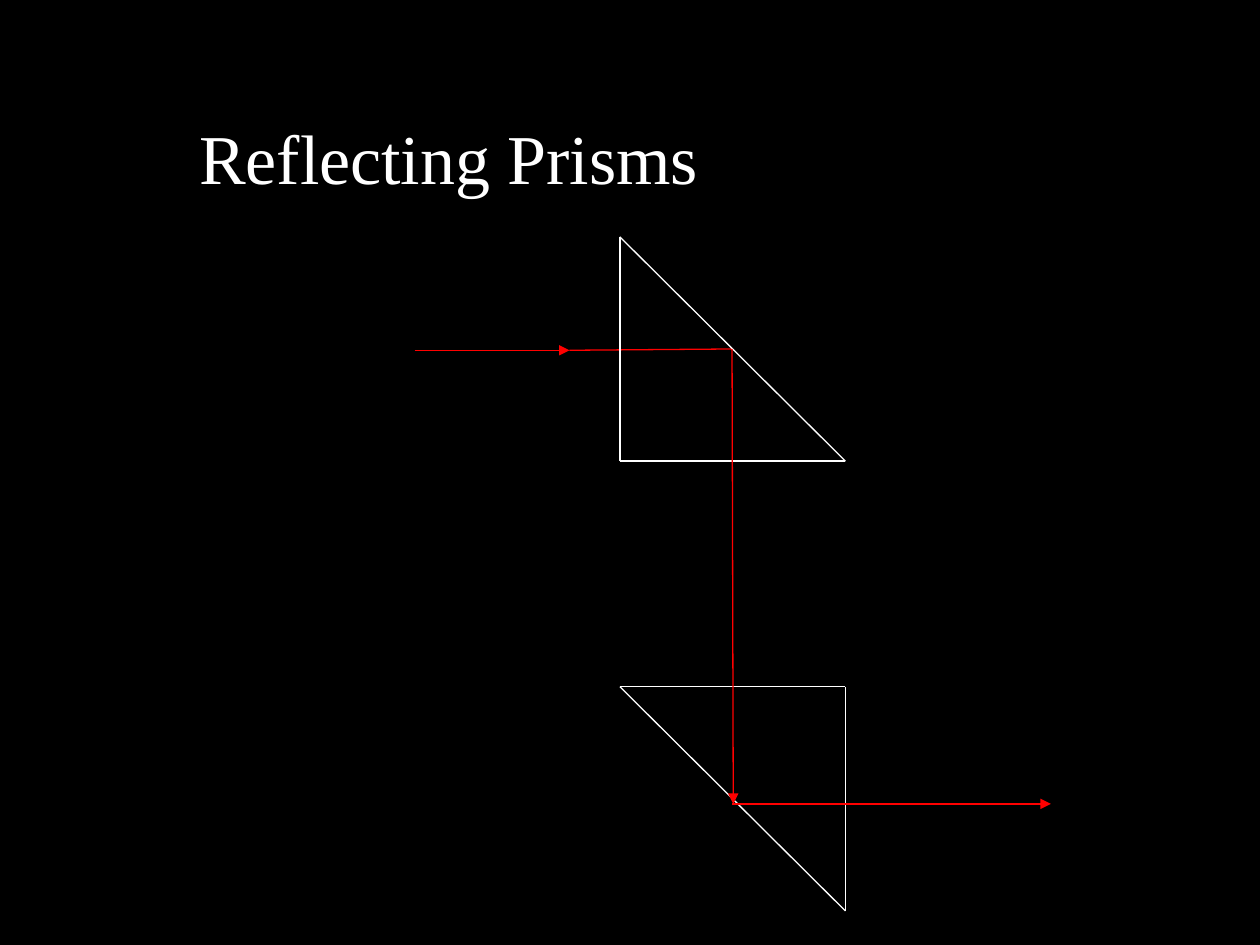
from typing import NamedTuple

from lxml import etree
from pptx import Presentation
from pptx.dml.color import RGBColor
from pptx.enum import shapes, text
from pptx.oxml.ns import qn
from pptx.util import Inches, Pt

BLACK, WHITE, RED = "000000", "FFFFFF", "FF0000"


class Line(NamedTuple):
    x1: float
    y1: float
    x2: float
    y2: float
    color: str = WHITE
    arrow: bool = False


def rgb(color: str) -> RGBColor:
    return RGBColor.from_string(color)


def set_text(sp, content: str, *, size: float, color: str,
             font: str = "Times New Roman", left: float = 0, indent: float = 0) -> None:
    tf = sp.text_frame
    tf.word_wrap = True
    tf.auto_size = text.MSO_AUTO_SIZE.NONE
    tf.vertical_anchor = text.MSO_ANCHOR.MIDDLE
    tf.margin_left = tf.margin_right = tf.margin_top = tf.margin_bottom = 0
    p = tf.paragraphs[0]
    p.alignment = text.PP_ALIGN.LEFT
    pPr = p._p.get_or_add_pPr()
    pPr.set("marL", str(Inches(left)))
    pPr.set("indent", str(Inches(indent)))
    r = p.add_run()
    r.text = content
    r.font.size = Pt(size)
    r.font.name = font
    r.font.color.rgb = rgb(color)


def draw_line(parent, line: Line) -> None:
    ends = [Inches(v) for v in line[:4]]
    c = parent.add_connector(shapes.MSO_CONNECTOR.STRAIGHT, *ends)
    c.line.color.rgb = rgb(line.color)
    c.line.width = Pt(0.75)
    if line.arrow:
        etree.SubElement(c.line._get_or_add_ln(), qn("a:tailEnd"), type="triangle")
    etree.SubElement(c._element.spPr, qn("a:effectLst"))


def prism(*corners: tuple[float, float]) -> list[Line]:
    """Return the sides that close a prism outline."""
    return [Line(*a, *b) for a, b in zip(corners, corners[1:] + corners[:1])]


prs = Presentation()
prs.slide_width, prs.slide_height = Inches(10), Inches(7.5)
s = prs.slides.add_slide(prs.slide_layouts[5])
s.background.fill.solid()
s.background.fill.fore_color.rgb = rgb(BLACK)

# Title
title = s.shapes.title
title.left, title.top = Inches(0.73), Inches(0.62)
title.width, title.height = Inches(8.54), Inches(1.25)
set_text(title, "Reflecting Prisms", size=40, color=WHITE, left=1.07, indent=-0.22)

# Prisms, with the ray entering the upper one
LEFT, RIGHT = 4.92, 6.71
optics = s.shapes.add_group_shape()
entering = [Line(4.52, 2.78, 5.81, 2.77, RED)]
upper = prism((LEFT, 3.66), (LEFT, 1.88), (RIGHT, 3.66))
incoming = [Line(3.29, 2.78, 4.52, 2.78, RED, arrow=True)]
lower = prism((LEFT, 5.45), (RIGHT, 5.45), (RIGHT, 7.23))
for line in entering + upper + incoming + lower:
    draw_line(optics.shapes, line)

# Reflected rays
for ray in (Line(5.81, 2.77, 5.82, 6.38, RED, arrow=True),
            Line(5.81, 6.38, 8.34, 6.38, RED, arrow=True)):
    draw_line(s.shapes, ray)

prs.save("out.pptx")
